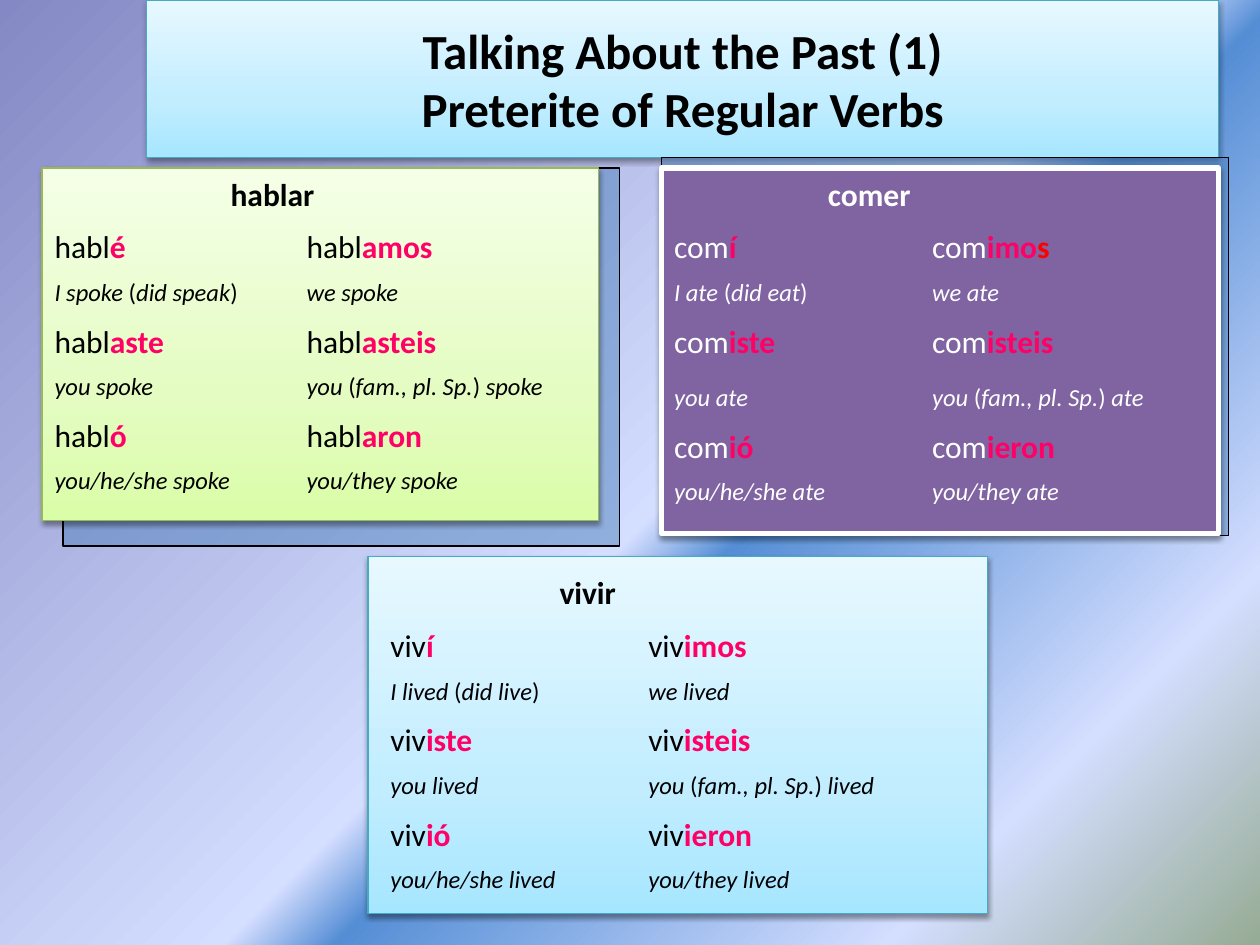
import itertools
import pptx
import pptx.dml.color
import pptx.enum.shapes
import pptx.enum.text
import pptx.oxml
import pptx.oxml.ns
import pptx.util

Cm, Pt = pptx.util.Cm, pptx.util.Pt
RGB = pptx.dml.color.RGBColor.from_string
NS = pptx.oxml.ns.nsdecls("a")


class Theme:
    """Colours, gradients and type sizes of the slide."""
    font = "Calibri"
    title, verb, gloss = Pt(28), Pt(18), Pt(14)
    black, white = "000000", "FFFFFF"
    ending, accent = "FF0066", "FF0000"
    backing = [(0, "4F81BD", 50), (100, "4F81BD", 50)]
    aqua = [(0, "A7E6FF"), (35, "C1EDFF"), (100, "E7F8FF")]
    lime = [(0, "DAFDA7"), (35, "E4FCC2"), (100, "F5FFE7")]
    purple = [(0, "8064A2"), (100, "8064A2")]
    sky = [(0, "8488C4"), (53, "D4DEFF"), (58, "558ED5", 46),
           (83, "D4DEFF"), (100, "96AB94")]
    aqua_line, lime_line = "46AAC5", "98B955"


CARDS = [
    dict(box=(0.85, 3.39, 11.22, 7.11), backing=(0.42, 0, 11.22, 7.62),
         fill=Theme.lime, line=Theme.lime_line, width=0.75, color=Theme.black,
         inset=(0.25, 0.13), name="hablar", indent=3.55, column=5.08, stem="habl",
         rows=[("é", "amos", "I spoke (did speak)", "we spoke"),
               ("aste", "asteis", "you spoke", "you (fam., pl. Sp.) spoke"),
               ("ó", "aron", "you/he/she spoke", "you/they spoke")]),
    dict(box=(13.34, 3.39, 11.22, 7.37), backing=(0, -0.21, 11.43, 7.62),
         fill=Theme.purple, line=Theme.white, width=3, color=Theme.white,
         inset=(0.25, 0.13), name="comer", indent=3.1, column=5.2, stem="com",
         loose_row=4,
         rows=[("í", "imo|s", "I ate (did eat)", "we ate"),
               ("iste", "isteis", "you ate", "you (fam., pl. Sp.) ate"),
               ("ió", "ieron", "you/he/she ate", "you/they ate")]),
    dict(box=(7.42, 11.22, 12.49, 7.2), backing=None,
         fill=Theme.aqua, line=Theme.aqua_line, width=0.75, color=Theme.black,
         inset=(0.45, 0.34), name="vivir", indent=3.41, column=5.2, stem="viv",
         rows=[("í", "imos", "I lived (did live)", "we lived"),
               ("iste", "isteis", "you lived", "you (fam., pl. Sp.) lived"),
               ("ió", "ieron", "you/he/she lived", "you/they lived")]),
]


def set_gradient(fill, host, stops, angle):
    """Fill a shape or background with stops of position, colour and opacity."""
    fill.gradient()
    grad = host.xpath(".//a:gradFill")[0]
    marks = "".join(
        f'<a:gs pos="{pos * 1000}"><a:srgbClr val="{color}">'
        f'<a:alpha val="{(alpha or [100])[0] * 1000}"/></a:srgbClr></a:gs>'
        for pos, color, *alpha in stops)
    grad.replace(grad.find(pptx.oxml.ns.qn("a:gsLst")),
                 pptx.oxml.parse_xml(f"<a:gsLst {NS}>{marks}</a:gsLst>"))
    grad.find(pptx.oxml.ns.qn("a:lin")).set("ang", str(angle * 60000))


def add_panel(slide, box, stops, line, width=0.75, shadow=True):
    """Add a rectangle with a vertical gradient and an optional soft shadow."""
    sp = slide.shapes.add_shape(pptx.enum.shapes.MSO_SHAPE.RECTANGLE,
                                *(Cm(v) for v in box))
    sp.shadow.inherit = False
    set_gradient(sp.fill, sp._element, stops, 270)
    sp.line.color.rgb = RGB(line)
    sp.line.width = Pt(width)
    if shadow:
        sp._element.spPr.find(pptx.oxml.ns.qn("a:effectLst")).append(
            pptx.oxml.parse_xml(
                f'<a:outerShdw {NS} blurRad="{Pt(3.1)}" dist="{Pt(1.6)}" '
                'dir="5400000" rotWithShape="0"><a:srgbClr val="000000">'
                '<a:alpha val="38000"/></a:srgbClr></a:outerShdw>'))
    return sp


def add_run(p, text, color, size, **fmt):
    """Append a formatted run."""
    r = p.add_run()
    r.text = text
    r.font.color.rgb = RGB(color)
    for key, value in dict(name=Theme.font, size=size, **fmt).items():
        setattr(r.font, key, value)


def add_line(tf, stop, size):
    """Start a left-aligned paragraph with one tab stop."""
    first = not tf.paragraphs[0].runs
    p = tf.paragraphs[0] if first else tf.add_paragraph()
    p._p.get_or_add_pPr().append(pptx.oxml.parse_xml(
        f'<a:tabLst {NS}><a:tab pos="{Cm(stop)}" algn="l"/></a:tabLst>'))
    p.alignment = pptx.enum.text.PP_ALIGN.LEFT
    p.space_before = Pt(0) if first else int(size * 0.48)
    return p


def add_form(p, lead, stem, ending, color):
    """Write a verb form with its ending picked out."""
    main, _, last = ending.partition("|")
    add_run(p, lead + stem, color, Theme.verb, bold=False)
    add_run(p, main, Theme.ending, Theme.verb, bold=True)
    if last:
        add_run(p, last, Theme.accent, Theme.verb, bold=True)


def add_gloss(p, text, color):
    """Write an italic translation with upright brackets."""
    for upright, chars in itertools.groupby(text, lambda ch: ch in "()"):
        add_run(p, "".join(chars), color, Theme.gloss, italic=not upright)


def add_title(slide, box, text):
    """Add the title banner."""
    tf = add_panel(slide, box, Theme.aqua, Theme.aqua_line).text_frame
    tf.vertical_anchor = pptx.enum.text.MSO_ANCHOR.MIDDLE
    p = tf.paragraphs[0]
    p.alignment = pptx.enum.text.PP_ALIGN.CENTER
    for i, line in enumerate(text.split("\n")):
        if i:
            p.add_line_break()
        add_run(p, line, Theme.black, Theme.title, bold=True)


def add_card(slide, card):
    """Add a conjugation card with its backing rectangle."""
    left, top, *_ = card["box"]
    color, stop = card["color"], card["column"]
    if card["backing"]:
        dx, dy, width, height = card["backing"]
        add_panel(slide, (left + dx, top + dy, width, height), Theme.backing,
                  Theme.black, shadow=False)
    sp = add_panel(slide, card["box"], card["fill"], card["line"], card["width"])
    tf = sp.text_frame
    margin_x, margin_y = card["inset"]
    for key, value in dict(word_wrap=True, margin_left=Cm(margin_x),
                           margin_top=Cm(margin_y),
                           vertical_anchor=pptx.enum.text.MSO_ANCHOR.TOP).items():
        setattr(tf, key, value)
    add_run(add_line(tf, card["indent"], Theme.verb), "\t" + card["name"],
            color, Theme.verb, bold=True)
    for singular, plural, gloss, plural_gloss in card["rows"]:
        p = add_line(tf, stop, Theme.verb)
        add_form(p, "", card["stem"], singular, color)
        add_form(p, "\t", card["stem"], plural, color)
        p = add_line(tf, stop, Theme.gloss)
        add_gloss(p, f"{gloss}\t{plural_gloss}", color)
    if "loose_row" in card:
        tf.paragraphs[card["loose_row"]].space_before = Pt(13)


def main():
    """Build the slide and save it."""
    prs = pptx.Presentation()
    prs.slide_width, prs.slide_height = Cm(25.4), Cm(19.05)
    slide = prs.slides.add_slide(prs.slide_layouts[6])
    set_gradient(slide.background.fill, slide._element, Theme.sky, 45)
    add_title(slide, (2.96, 0, 21.6, 3.18),
              "Talking About the Past (1)\nPreterite of Regular Verbs")
    for card in CARDS:
        add_card(slide, card)
    prs.save("out.pptx")


if __name__ == "__main__":
    main()
